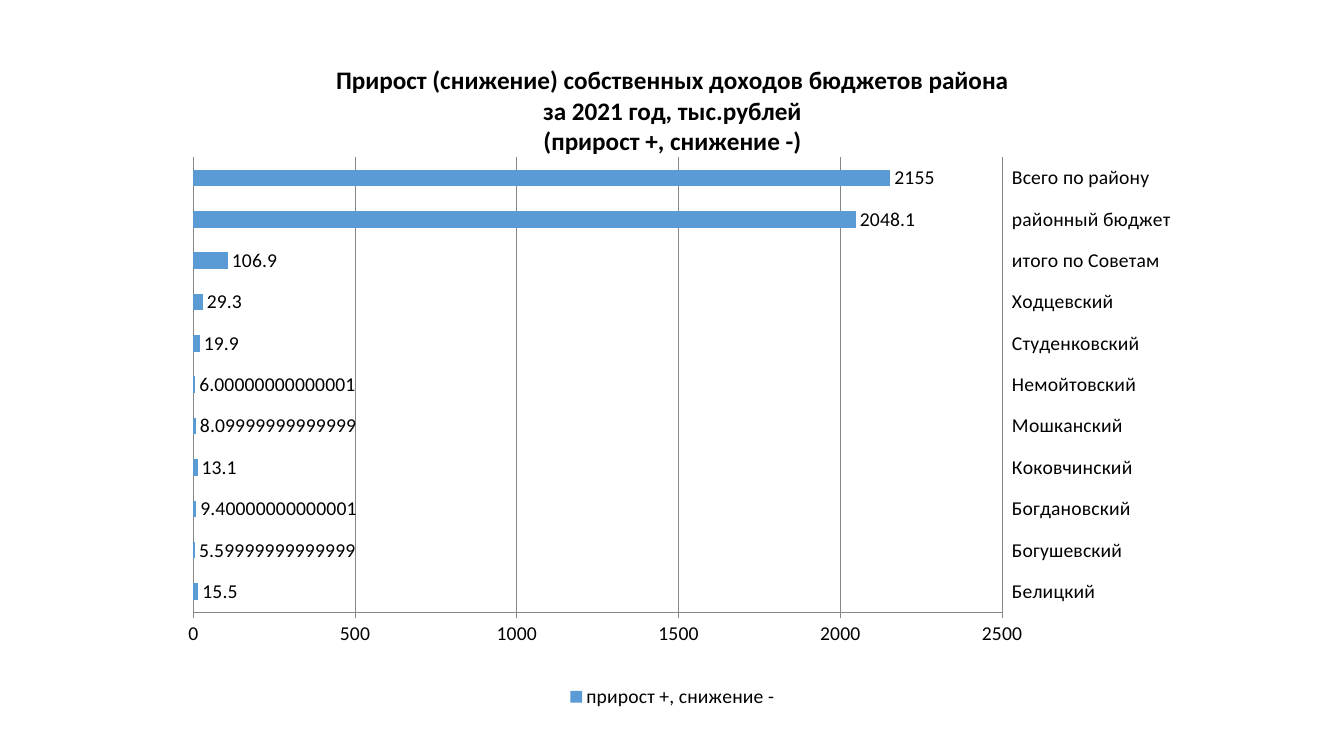
import pptx
import pptx.chart.data
import pptx.dml.color
import pptx.enum.chart
import pptx.oxml
import pptx.oxml.ns
import pptx.util

PX = 9525
HUES = {"bar": "5B9BD5", "grid": "868686", "text": "000000"}
FACE = "Calibri"
TITLE = [
    "Прирост (снижение) собственных доходов бюджетов района",
    "за 2021 год, тыс.рублей",
    "(прирост +, снижение -)",
]
NAME = "прирост +, снижение -"
ROWS = {
    "Белицкий": 15.5,
    "Богушевский": 5.59999999999999,
    "Богдановский": 9.40000000000001,
    "Коковчинский": 13.1,
    "Мошканский": 8.09999999999999,
    "Немойтовский": 6.00000000000001,
    "Студенковский": 19.9,
    "Ходцевский": 29.3,
    "итого по Советам": 106.9,
    "районный бюджет": 2048.1,
    "Всего по району": 2155,
}
PLOT = {"x": 0.032, "y": 0.172, "w": 0.79, "h": 0.678}


def put(item, **vals):
    for key, val in vals.items():
        setattr(item, key, val)


def hue(key):
    return pptx.dml.color.RGBColor.from_string(HUES[key])


def style(font, size, bold=False):
    put(font, name=FACE, size=pptx.util.Pt(size), bold=bold)
    font.color.rgb = hue("text")


def rule(line):
    line.color.rgb = hue("grid")
    line.width = pptx.util.Pt(0.75)


def place(chart):
    area = chart.element.find(".//" + pptx.oxml.ns.qn("c:plotArea"))
    for old in area.findall(pptx.oxml.ns.qn("c:layout")):
        area.remove(old)
    parts = '<c:layoutTarget val="inner"/><c:xMode val="edge"/><c:yMode val="edge"/>'
    parts += "".join(f'<c:{key} val="{val}"/>' for key, val in PLOT.items())
    area.insert(0, pptx.oxml.parse_xml(
        f'<c:layout {pptx.oxml.ns.nsdecls("c")}>'
        f"<c:manualLayout>{parts}</c:manualLayout></c:layout>"))


def head(chart):
    chart.has_title = True
    chart.chart_title.include_in_layout = False
    frame = chart.chart_title.text_frame
    frame.text = "\n".join(TITLE)
    for para in frame.paragraphs:
        style(para.runs[0].font, 18, True)


def axes(chart):
    enum = pptx.enum.chart
    marks = enum.XL_TICK_MARK
    spots = enum.XL_TICK_LABEL_POSITION
    looks = [
        (chart.category_axis, False, marks.NONE, spots.HIGH),
        (chart.value_axis, True, marks.OUTSIDE, spots.NEXT_TO_AXIS),
    ]
    for axis, grid, mark, spot in looks:
        put(axis, has_major_gridlines=grid, major_tick_mark=mark,
            minor_tick_mark=marks.NONE, tick_label_position=spot)
        put(axis.tick_labels, number_format="General", number_format_is_linked=False)
        style(axis.tick_labels.font, 14)
        rule(axis.format.line)
    put(chart.value_axis, minimum_scale=0, maximum_scale=2500, major_unit=500)
    rule(chart.value_axis.major_gridlines.format.line)


def bars(chart):
    plot = chart.plots[0]
    put(plot, gap_width=150, vary_by_categories=False, has_data_labels=True)
    fill = plot.series[0].format.fill
    fill.solid()
    fill.fore_color.rgb = hue("bar")
    tags = plot.data_labels
    put(tags, show_value=True, number_format="General", number_format_is_linked=False,
        position=pptx.enum.chart.XL_LABEL_POSITION.OUTSIDE_END)
    style(tags.font, 14)


def graph(slide, left, top, wide, high):
    data = pptx.chart.data.CategoryChartData()
    data.categories = list(ROWS)
    data.add_series(NAME, list(ROWS.values()))
    kind = pptx.enum.chart.XL_CHART_TYPE.BAR_CLUSTERED
    box = [size * PX for size in (left, top, wide, high)]
    chart = slide.shapes.add_chart(kind, *box, data).chart
    style(chart.font, 10)
    head(chart)
    axes(chart)
    bars(chart)
    chart.has_legend = True
    put(chart.legend, position=pptx.enum.chart.XL_LEGEND_POSITION.BOTTOM,
        include_in_layout=False)
    style(chart.legend.font, 14)
    place(chart)


def main():
    deck = pptx.Presentation()
    put(deck, slide_width=1280 * PX, slide_height=720 * PX)
    slide = deck.slides.add_slide(deck.slide_layouts[6])
    graph(slide, 153, 40, 975, 639)
    deck.save("out.pptx")


if __name__ == "__main__":
    main()
